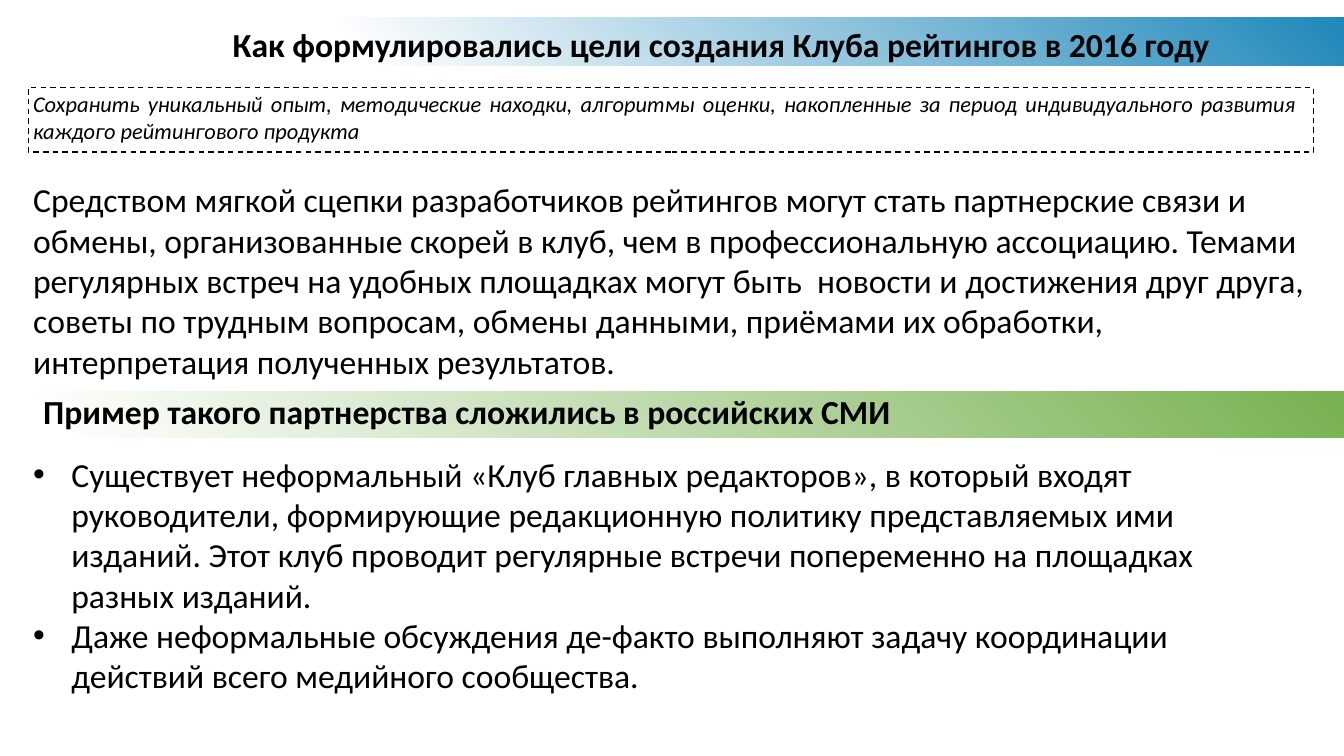
from lxml import etree
from pptx import Presentation
from pptx.dml.color import RGBColor
from pptx.enum.dml import MSO_LINE
from pptx.enum.shapes import MSO_SHAPE as SHAPE
from pptx.enum.text import PP_ALIGN as ALIGN
from pptx.oxml import parse_xml
from pptx.oxml.ns import nsdecls, qn
from pptx.util import Inches, Pt


def color(code):
    return RGBColor.from_string(code)


def write(box, texts, size=24, bold=False, italic=False, align=ALIGN.LEFT, bullet=False):
    frame = slide.shapes.add_textbox(*map(Inches, box)).text_frame
    frame.word_wrap = True
    for i, text in enumerate(texts):
        para = frame.add_paragraph() if i else frame.paragraphs[0]
        para.alignment = align
        if bullet:
            props = para._p.get_or_add_pPr()
            props.set("marL", str(Inches(0.38)))
            props.set("indent", str(-Inches(0.38)))
            etree.SubElement(props, qn("a:buFont")).set("typeface", "Arial")
            etree.SubElement(props, qn("a:buChar")).set("char", "•")
        run = para.add_run()
        run.text = text
        font = run.font
        font.name, font.size = "Calibri", Pt(size)
        font.bold, font.italic = bold, italic
        font.color.rgb = color("000000")


deck = Presentation()
deck.slide_width, deck.slide_height = Inches(13.33), Inches(7.5)
slide = deck.slides.add_slide(deck.slide_layouts[6])

# Dashed frame around the goal
frame = slide.shapes.add_shape(SHAPE.RECTANGLE, *map(Inches, (0.28, 0.87, 12.75, 0.64)))
frame.shadow.inherit = False
frame.fill.background()
frame.line.color.rgb = color("000000")
frame.line.width = Pt(1)
frame.line.dash_style = MSO_LINE.DASH

# Heading bands, fading out from the lower corner
bands = [
    ((2.98, 0.17, 10.35, 0.48), "1F88BA", False),
    ((-0.31, 3.88, 14.29, 0.46), "70AD47", True),
]
for box, tint, flip in bands:
    band = slide.shapes.add_shape(SHAPE.RECTANGLE, *map(Inches, box))
    band.shadow.inherit = False
    band.line.fill.background()
    stops = "".join(
        f'<a:gs pos="{pos * 1000}"><a:srgbClr val="{code}"/></a:gs>'
        for pos, code in [(0, "FFFFFF"), (6, "FFFFFF"), (100, tint)]
    )
    fade = parse_xml(
        f'<a:gradFill {nsdecls("a")} rotWithShape="1"><a:gsLst>{stops}</a:gsLst>'
        '<a:path path="circle"><a:fillToRect t="100000" r="100000"/></a:path></a:gradFill>'
    )
    props = band._element.spPr
    props.find(qn("a:prstGeom")).addnext(fade)
    if flip:
        props.find(qn("a:xfrm")).set("flipH", "1")

# Headings
write((2.21, 0.19, 10.75, 0.5),
      ["Как формулировались цели создания Клуба рейтингов в 2016 году"], bold=True)
write((0.33, 3.83, 13, 0.5),
      ["Пример такого партнерства сложились в российских СМИ"], bold=True)

# Goal and means
write((0.23, 0.85, 12.73, 0.64),
      ["Сохранить уникальный опыт, методические находки, алгоритмы оценки, накопленные "
       "за период индивидуального развития каждого рейтингового продукта"],
      size=16, italic=True, align=ALIGN.JUSTIFY)
write((0.23, 1.73, 12.99, 2.12),
      ["Средством мягкой сцепки разработчиков рейтингов могут стать партнерские связи и "
       "обмены, организованные скорей в клуб, чем в профессиональную ассоциацию. Темами "
       "регулярных встреч на удобных площадках могут быть  новости и достижения друг друга, "
       "советы по трудным вопросам, обмены данными, приёмами их обработки, "
       "интерпретация полученных результатов."])

# Example from the media
write((0.23, 4.45, 12.73, 2.5),
      ["Существует неформальный «Клуб главных редакторов», в который входят "
       "руководители, формирующие редакционную политику представляемых ими "
       "изданий. Этот клуб проводит регулярные встречи попеременно на площадках "
       "разных изданий.",
       "Даже неформальные обсуждения де-факто выполняют задачу координации "
       "действий всего медийного сообщества."],
      bullet=True)

deck.save("out.pptx")
